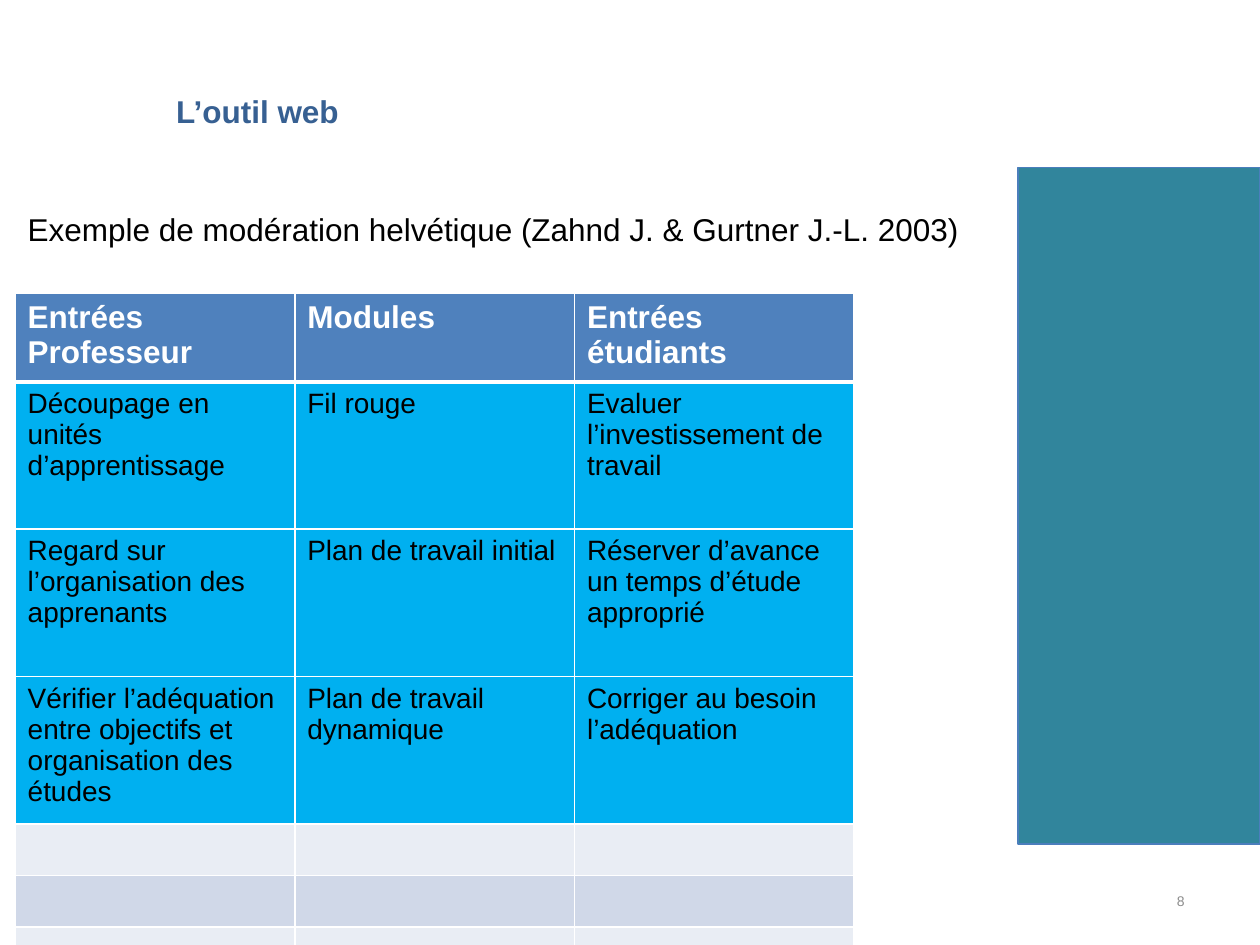
from dataclasses import dataclass

from lxml import etree
from pptx import Presentation
from pptx.dml.color import RGBColor
from pptx.enum.shapes import MSO_SHAPE
from pptx.enum.text import MSO_ANCHOR, PP_ALIGN
from pptx.oxml.ns import qn
from pptx.util import Inches, Pt

RECTANGLE = MSO_SHAPE.RECTANGLE
TOP, MIDDLE = MSO_ANCHOR.TOP, MSO_ANCHOR.MIDDLE
LEFT, RIGHT = PP_ALIGN.LEFT, PP_ALIGN.RIGHT

FONT = "Arial"
COLORS = {
    "panel": "31859C",
    "panel_line": "4B7EBC",
    "title": "376092",
    "text": "000000",
    "page_number": "8C8C8C",
    "header": "4F81BD",
    "module": "00B0F0",
    "band_light": "E9EDF4",
    "band_dark": "D0D8E8",
    "white": "FFFFFF",
}


@dataclass
class Label:
    text: str
    left: float
    top: float
    width: float
    size: int
    color: str
    bold: bool = False
    wrap: bool = True
    align: PP_ALIGN = LEFT
    anchor: MSO_ANCHOR = TOP


@dataclass
class Row:
    height: float
    fill: str
    texts: tuple = ("", "", "")
    size: int = 18
    color: str = "text"
    bold: bool = False
    bottom_line: int = 1


LABELS = [
    Label("8", 7.17, 6.95, 2.33, 8, "page_number", align=RIGHT, anchor=MIDDLE),
    Label("Exemple de modération helvétique (Zahnd J. & Gurtner J.-L. 2003)",
          0.12, 1.62, 7.72, 18, "text"),
    Label("L’outil web", 1.3, 0.68, 1.51, 18, "title", bold=True, wrap=False),
]

# A line break in a cell text starts a new paragraph
MODULES = [
    ("Découpage en unités\nd’apprentissage", "Fil rouge",
     "Evaluer l’investissement de travail"),
    ("Regard sur l’organisation des apprenants", "Plan de travail initial",
     "Réserver d’avance\nun temps d’étude approprié"),
    ("Vérifier l’adéquation entre objectifs et organisation des études",
     "Plan de travail dynamique", "Corriger au besoin l’adéquation"),
]
HEADER = Row(0.69, "header", ("Entrées Professeur", "Modules", "Entrées étudiants"),
             color="white", bold=True, bottom_line=3)
ROWS = (
    [HEADER]
    + [Row(1.17, "module", texts, size=16) for texts in MODULES]
    + [Row(0.41, band) for band in ("band_light", "band_dark") * 2]
)
COLUMN_WIDTH = 2.22


def rgb(name: str) -> RGBColor:
    return RGBColor.from_string(COLORS[name])


def style_text(frame, size: int, color: str, bold: bool, align: PP_ALIGN = LEFT) -> None:
    for paragraph in frame.paragraphs:
        paragraph.alignment = align
        font = paragraph.font
        font.name, font.size, font.bold = FONT, Pt(size), bold
        font.color.rgb = rgb(color)


def add_panel(slide) -> None:
    panel = slide.shapes.add_shape(
        RECTANGLE, Inches(8.08), Inches(1.33), Inches(1.92), Inches(5.37))
    panel.shadow.inherit = False
    panel.fill.solid()
    panel.fill.fore_color.rgb = rgb("panel")
    panel.line.color.rgb = rgb("panel_line")
    panel.line.width = Pt(0.75)


def add_label(slide, label: Label) -> None:
    box = slide.shapes.add_textbox(
        Inches(label.left), Inches(label.top), Inches(label.width), Inches(0.4))
    frame = box.text_frame
    frame.text = label.text
    frame.word_wrap = label.wrap
    frame.vertical_anchor = label.anchor
    style_text(frame, label.size, label.color, label.bold, label.align)


def add_borders(cell, top: int, bottom: int) -> None:
    properties = cell._tc.get_or_add_tcPr()
    widths = {"lnL": 1, "lnR": 1, "lnT": top, "lnB": bottom}
    for position, (side, width) in enumerate(widths.items()):
        line = etree.Element(qn(f"a:{side}"), w=str(Pt(width)))
        fill = etree.SubElement(line, qn("a:solidFill"))
        etree.SubElement(fill, qn("a:srgbClr"), val=COLORS["white"])
        properties.insert(position, line)


def add_module_table(slide, rows: list[Row]) -> None:
    column_count = len(HEADER.texts)
    table = slide.shapes.add_table(
        len(rows), column_count, Inches(0.12), Inches(2.33),
        Inches(COLUMN_WIDTH * column_count),
        Inches(sum(row.height for row in rows))).table
    for column in table.columns:
        column.width = Inches(COLUMN_WIDTH)
    top_line = 1
    for row_index, row in enumerate(rows):
        table.rows[row_index].height = Inches(row.height)
        for column_index, text in enumerate(row.texts):
            cell = table.cell(row_index, column_index)
            cell.text = text
            cell.fill.solid()
            cell.fill.fore_color.rgb = rgb(row.fill)
            style_text(cell.text_frame, row.size, row.color, row.bold)
            add_borders(cell, top_line, row.bottom_line)
        top_line = row.bottom_line


def main() -> None:
    presentation = Presentation()
    presentation.slide_width = Inches(10)
    presentation.slide_height = Inches(7.5)
    slide = presentation.slides.add_slide(presentation.slide_layouts[6])

    # Side panel, then page number, citation and title
    add_panel(slide)
    for label in LABELS:
        add_label(slide, label)

    # Modules with teacher and student entries
    add_module_table(slide, ROWS)
    presentation.save("out.pptx")


if __name__ == "__main__":
    main()
